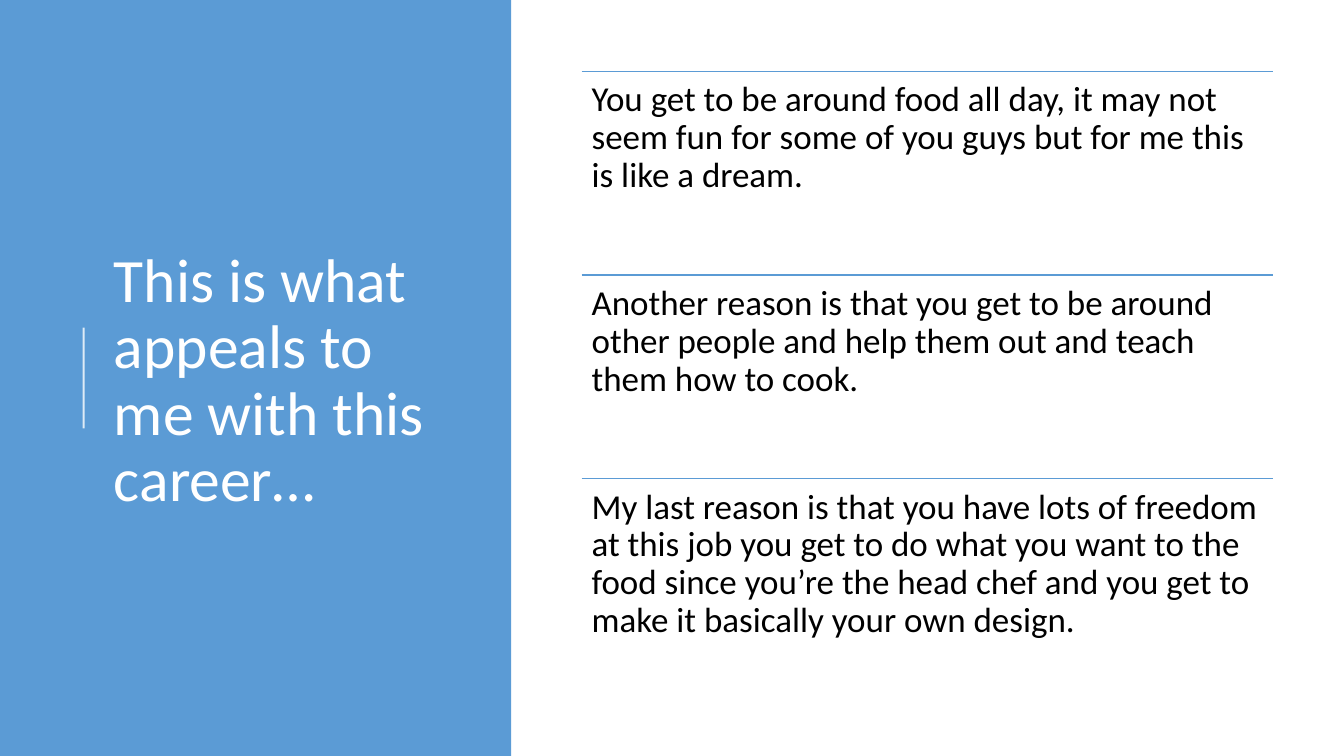
from dataclasses import dataclass

from lxml.etree import SubElement
from pptx import Presentation
from pptx.dml.color import RGBColor
from pptx.enum.shapes import MSO_CONNECTOR, MSO_SHAPE
from pptx.enum.text import MSO_ANCHOR, MSO_AUTO_SIZE, PP_ALIGN
from pptx.oxml.ns import qn
from pptx.slide import Slide
from pptx.text.text import TextFrame
from pptx.util import Emu, Pt

EMU_PER_PX = 9144  # 100 px to the inch
SLIDE_WIDTH, SLIDE_HEIGHT = 1333, 750
PANEL_WIDTH = 507
REASON_LEFT, REASON_WIDTH = 577, 686
REASON_TOP, REASON_BOTTOM = 71, 679

BLUE = RGBColor(0x5B, 0x9B, 0xD5)
WHITE = RGBColor(0xFF, 0xFF, 0xFF)
BLACK = RGBColor(0x00, 0x00, 0x00)
FONT = "Calibri"

TITLE = "This is what appeals to me with this career…"
REASONS = (
    "You get to be around food all day, it may not seem fun for some of you guys "
    "but for me this is like a dream.",
    "Another reason is that you get to be around other people and help them out "
    "and teach them how to cook.",
    "My last reason is that you have lots of freedom at this job you get to do "
    "what you want to the food since you’re the head chef and you get to make it "
    "basically your own design.",
)


@dataclass(frozen=True)
class Reason:
    text: str
    top: int
    height: int


def px(length: int) -> Emu:
    return Emu(length * EMU_PER_PX)


def write_text(frame: TextFrame, text: str, *, size: int, color: RGBColor,
               anchor: MSO_ANCHOR, margin_y: int) -> None:
    frame.word_wrap = True
    frame.auto_size = MSO_AUTO_SIZE.NONE
    frame.vertical_anchor = anchor
    frame.margin_left = frame.margin_right = px(10)
    frame.margin_top = frame.margin_bottom = px(margin_y)
    paragraph = frame.paragraphs[0]
    paragraph.alignment = PP_ALIGN.LEFT
    paragraph.line_spacing = 0.9
    run = paragraph.add_run()
    run.text = text
    run.font.name = FONT
    run.font.size = Pt(size)
    run.font.color.rgb = color


def add_rule(slide: Slide, start: tuple[int, int], end: tuple[int, int], *,
             color: RGBColor, width: float, opacity: int = 100) -> None:
    connector = slide.shapes.add_connector(
        MSO_CONNECTOR.STRAIGHT, *map(px, start), *map(px, end))
    connector.line.color.rgb = color
    connector.line.width = Pt(width)
    properties = connector._element.spPr
    if opacity < 100:
        color_element = properties.find(f".//{qn('a:srgbClr')}")
        SubElement(color_element, qn("a:alpha"), val=str(opacity * 1000))
    SubElement(properties, qn("a:effectLst"))


def add_panel(slide: Slide) -> None:
    panel = slide.shapes.add_shape(
        MSO_SHAPE.RECTANGLE, 0, 0, px(PANEL_WIDTH), px(SLIDE_HEIGHT))
    panel.shadow.inherit = False
    panel.fill.solid()
    panel.fill.fore_color.rgb = BLUE
    panel.line.fill.background()
    # Keep the panel behind the title
    slide.shapes._spTree.insert(2, panel._element)


def add_title(slide: Slide) -> None:
    title = slide.shapes.title
    title.left, title.top, title.width, title.height = map(px, (103, 78, 369, 602))
    write_text(title.text_frame, TITLE, size=44, color=WHITE,
               anchor=MSO_ANCHOR.MIDDLE, margin_y=5)


def add_reason(slide: Slide, reason: Reason) -> None:
    add_rule(slide, (REASON_LEFT, reason.top),
             (REASON_LEFT + REASON_WIDTH, reason.top), color=BLUE, width=1)
    box = slide.shapes.add_textbox(
        *map(px, (REASON_LEFT, reason.top, REASON_WIDTH, reason.height)))
    write_text(box.text_frame, reason.text, size=25, color=BLACK,
               anchor=MSO_ANCHOR.TOP, margin_y=10)


def main() -> None:
    presentation = Presentation()
    presentation.slide_width = px(SLIDE_WIDTH)
    presentation.slide_height = px(SLIDE_HEIGHT)
    slide = presentation.slides.add_slide(
        presentation.slide_layouts.get_by_name("Title Only"))

    # Title panel with its accent line
    add_panel(slide)
    add_title(slide)
    add_rule(slide, (83, 425), (83, 325), color=WHITE, width=1.5, opacity=80)

    # Reasons, stacked in equal rows
    row_height = (REASON_BOTTOM - REASON_TOP) // len(REASONS)
    for index, text in enumerate(REASONS):
        add_reason(slide, Reason(text, REASON_TOP + index * row_height, row_height))

    presentation.save("out.pptx")


if __name__ == "__main__":
    main()
